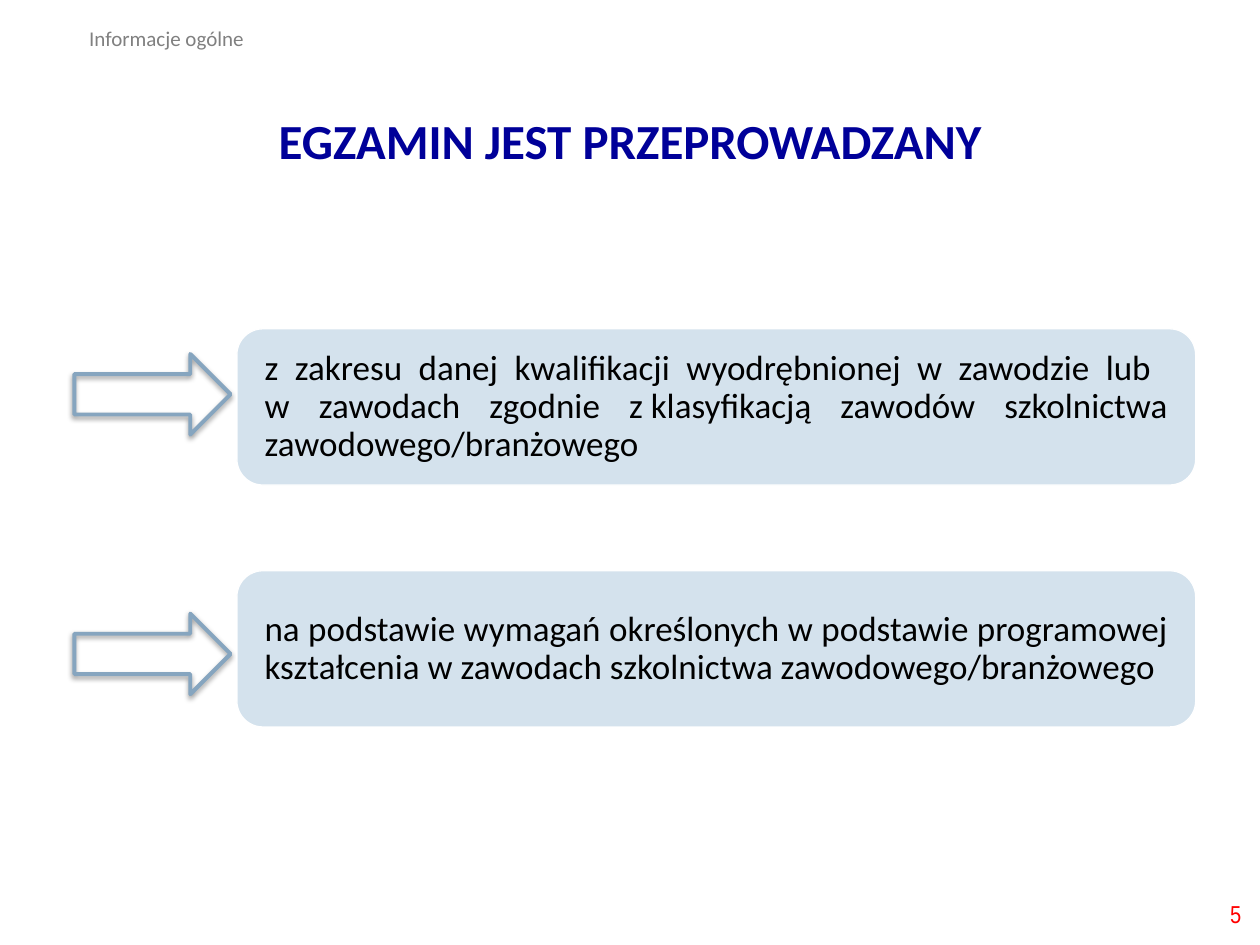
from lxml import etree
from pptx import Presentation
from pptx.dml.color import RGBColor
from pptx.enum import shapes, text
from pptx.oxml import ns
from pptx.util import Inches, Pt

SECTION = "Informacje ogólne"
TITLE = "EGZAMIN JEST PRZEPROWADZANY"
PAGE_NUMBER = "5"
RULES = [
    "z zakresu danej kwalifikacji wyodrębnionej w zawodzie lub \n"
    "w zawodach zgodnie z\u00a0klasyfikacją zawodów szkolnictwa zawodowego/branżowego",
    "na podstawie wymagań określonych w podstawie programowej "
    "kształcenia w zawodach szkolnictwa zawodowego/branżowego",
]

NAVY = RGBColor(0x00, 0x00, 0x99)
GRAY = RGBColor(0x80, 0x80, 0x80)
RED = RGBColor(0xFF, 0x00, 0x00)
BLACK = RGBColor(0x00, 0x00, 0x00)
WHITE = RGBColor(0xFF, 0xFF, 0xFF)
PALE_BLUE = RGBColor(0xD4, 0xE2, 0xED)
STEEL_BLUE = RGBColor(0x86, 0xA5, 0xBF)

BOX_TOPS = (2.61, 4.53)
ARROW_TOPS = (2.81, 4.87)


def write(shape, content, size, color, font="Calibri", bold=False,
          align=text.PP_ALIGN.LEFT, anchor=text.MSO_ANCHOR.MIDDLE,
          line_spacing=None, inset=None):
    frame = shape.text_frame
    frame.word_wrap = True
    frame.vertical_anchor = anchor
    if inset is not None:
        frame.margin_left = frame.margin_right = Inches(inset)
        frame.margin_top = frame.margin_bottom = Inches(inset)
    paragraph = frame.paragraphs[0]
    paragraph.text = content
    paragraph.alignment = align
    paragraph.line_spacing = line_spacing
    for run in paragraph.runs:
        run.font.name = font
        run.font.size = Pt(size)
        run.font.bold = bold
        run.font.color.rgb = color


def add_soft_shadow(shape):
    effects = etree.SubElement(shape._element.spPr, ns.qn("a:effectLst"))
    shadow = etree.SubElement(effects, ns.qn("a:outerShdw"), blurRad=str(Pt(3.1)),
                              dist=str(Pt(1.6)), dir="5400000", rotWithShape="0")
    color = etree.SubElement(shadow, ns.qn("a:srgbClr"), val="000000")
    etree.SubElement(color, ns.qn("a:alpha"), val="38000")


def add_arrow(slide, top):
    arrow = slide.shapes.add_shape(shapes.MSO_SHAPE.RIGHT_ARROW, Inches(0.59),
                                   Inches(top), Inches(1.24), Inches(0.64))
    arrow.fill.background()
    arrow.line.color.rgb = STEEL_BLUE
    arrow.line.width = Pt(2.25)
    add_soft_shadow(arrow)


def add_rule_box(slide, rule, top):
    box = slide.shapes.add_shape(shapes.MSO_SHAPE.ROUNDED_RECTANGLE, Inches(1.88),
                                 Inches(top), Inches(7.61), Inches(1.24))
    box.shadow.inherit = False
    box.fill.solid()
    box.fill.fore_color.rgb = PALE_BLUE
    box.line.color.rgb = WHITE
    box.line.width = Pt(0.75)
    write(box, rule, 20, BLACK, align=text.PP_ALIGN.JUSTIFY,
          line_spacing=0.9, inset=0.16)


def add_label(slide, content, left, top, width, height, **style):
    label = slide.shapes.add_textbox(Inches(left), Inches(top),
                                     Inches(width), Inches(height))
    write(label, content, **style)


def main():
    deck = Presentation()
    deck.slide_width, deck.slide_height = Inches(10), Inches(7.5)
    slide = deck.slides.add_slide(deck.slide_layouts[6])

    add_label(slide, PAGE_NUMBER, 7.7, 7.05, 2.25, 0.4, size=14, color=RED,
              font="Arial Narrow", align=text.PP_ALIGN.RIGHT)
    for rule, box_top, arrow_top in zip(RULES, BOX_TOPS, ARROW_TOPS):
        add_arrow(slide, arrow_top)
        add_rule_box(slide, rule, box_top)
    add_label(slide, TITLE, 0, 0.89, 10, 0.5, size=28, color=NAVY, bold=True,
              align=text.PP_ALIGN.CENTER, line_spacing=0.9)
    add_label(slide, SECTION, 0.61, 0.15, 2.67, 0.3, size=12, color=GRAY,
              anchor=text.MSO_ANCHOR.TOP)

    deck.save("out.pptx")


if __name__ == "__main__":
    main()
